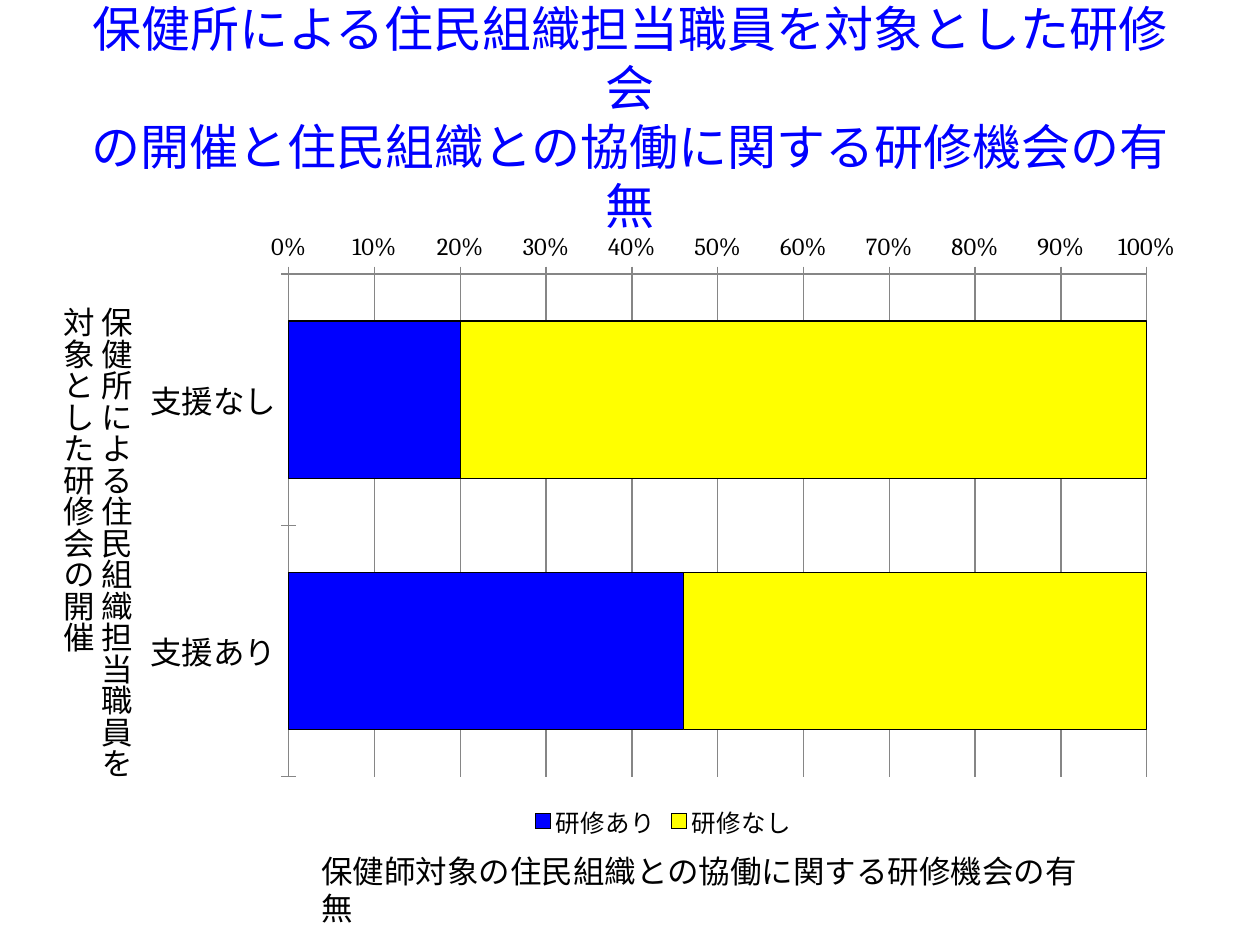
from dataclasses import dataclass

from lxml import etree
from pptx import Presentation
from pptx.chart.data import CategoryChartData
from pptx.dml.color import RGBColor
from pptx.enum.chart import XL_CHART_TYPE, XL_LEGEND_POSITION, XL_TICK_MARK
from pptx.enum.text import MSO_ANCHOR, MSO_AUTO_SIZE, PP_ALIGN
from pptx.oxml import parse_xml
from pptx.oxml.ns import nsdecls, qn
from pptx.util import Inches, Pt

BLUE = RGBColor(0x00, 0x00, 0xFF)
YELLOW = RGBColor(0xFF, 0xFF, 0x00)
BLACK = RGBColor(0x00, 0x00, 0x00)
GRAY = RGBColor(0x86, 0x86, 0x86)
BODY_FONT, AXIS_FONT = "Calibri", "Cambria"
BAR_TYPE = XL_CHART_TYPE.BAR_STACKED_100
LEGEND_BOTTOM = XL_LEGEND_POSITION.BOTTOM
TICK_CROSS, TICK_NONE = XL_TICK_MARK.CROSS, XL_TICK_MARK.NONE
MIDDLE, CENTER = MSO_ANCHOR.MIDDLE, PP_ALIGN.CENTER
NO_AUTOFIT = MSO_AUTO_SIZE.NONE

prs = Presentation()
prs.slide_width, prs.slide_height = Inches(10), Inches(7.5)


@dataclass(frozen=True)
class Box:
    """Position and size as shares of the slide."""
    x: float
    y: float
    w: float
    h: float

    def emu(self) -> tuple[int, int, int, int]:
        width, height = prs.slide_width, prs.slide_height
        return (int(self.x * width), int(self.y * height),
                int(self.w * width), int(self.h * height))


@dataclass(frozen=True)
class Caption:
    box: Box
    lines: tuple[str, ...]
    vertical: bool = False


@dataclass(frozen=True)
class Answer:
    name: str
    values: tuple[int, ...]
    color: RGBColor


TITLE_BOX = Box(0.05, 0.04, 0.9, 1 / 6)
CHART_BOX = Box(0.103, 0.2333, 0.847, 0.66)
PLOT_SHARES = {"x": 0.149, "y": 0.086, "w": 0.804, "h": 0.806}
TITLE_LINES = ("保健所による住民組織担当職員を対象とした研修会",
               "の開催と住民組織との協働に関する研修機会の有無")
CATEGORIES = ("支援なし", "支援あり")
ANSWERS = (Answer("研修あり", (20, 46), BLUE), Answer("研修なし", (80, 54), YELLOW))
CAPTIONS = (
    Caption(Box(0.031, 0.312, 0.081, 0.5133),
            ("保健所による住民組織担当職員を", "対象とした研修会の開催"), vertical=True),
    Caption(Box(0.245, 0.8947, 0.639, 0.0533),
            ("保健師対象の住民組織との協働に関する研修機会の有無",)),
)


def style_font(font, size: float, color: RGBColor, name: str = BODY_FONT) -> None:
    font.name, font.size = name, Pt(size)
    font.color.rgb = color


def add_run(p, text: str, size: float, color: RGBColor) -> None:
    r = p.add_run()
    r.text = text
    style_font(r.font, size, color)
    etree.SubElement(r.font._element, qn("a:ea")).set("typeface", BODY_FONT)


def fill_title(s) -> None:
    sp = s.shapes.title
    sp.left, sp.top, sp.width, sp.height = TITLE_BOX.emu()
    tf = sp.text_frame
    tf.word_wrap, tf.auto_size, tf.vertical_anchor = True, NO_AUTOFIT, MIDDLE
    p = tf.paragraphs[0]
    p.alignment = CENTER
    for i, line in enumerate(TITLE_LINES):
        if i:
            p.add_line_break()
        add_run(p, line, 28, BLUE)


def add_caption(s, caption: Caption) -> None:
    tf = s.shapes.add_textbox(*caption.box.emu()).text_frame
    tf.word_wrap = not caption.vertical
    if caption.vertical:
        tf._txBody.bodyPr.set("vert", "eaVert")
    for i, line in enumerate(caption.lines):
        p = tf.add_paragraph() if i else tf.paragraphs[0]
        add_run(p, line, 18, BLACK)


def set_plot_layout(chart) -> None:
    """Fix the inner plot area as shares of the chart."""
    area = chart.element.find(".//" + qn("c:plotArea"))
    for old in area.findall(qn("c:layout")):
        area.remove(old)
    modes = "".join(f'<c:{k}Mode val="edge"/>' for k in "xy")
    sizes = "".join(f'<c:{k} val="{v}"/>' for k, v in PLOT_SHARES.items())
    area.insert(0, parse_xml(
        f'<c:layout {nsdecls("c")}><c:manualLayout><c:layoutTarget val="inner"/>'
        f'{modes}{sizes}</c:manualLayout></c:layout>'))


def style_axis(axis, size: float, font_name: str) -> None:
    axis.major_tick_mark, axis.minor_tick_mark = TICK_CROSS, TICK_NONE
    axis.format.line.color.rgb = GRAY
    style_font(axis.tick_labels.font, size, BLACK, font_name)


def add_training_chart(s) -> None:
    data = CategoryChartData()
    data.categories = CATEGORIES
    for answer in ANSWERS:
        data.add_series(answer.name, answer.values)
    chart = s.shapes.add_chart(BAR_TYPE, *CHART_BOX.emu(), data).chart
    chart.has_title = False
    style_font(chart.font, 12, BLACK)

    # Bars
    plot = chart.plots[0]
    plot.gap_width, plot.overlap, plot.vary_by_categories = 60, 100, False
    for series, answer in zip(plot.series, ANSWERS):
        series.format.fill.solid()
        series.format.fill.fore_color.rgb = answer.color
        series.format.line.color.rgb = BLACK
        series.format.line.width = Pt(0.75)

    # Axes, with the first category on top
    style_axis(chart.category_axis, 18, BODY_FONT)
    chart.category_axis.reverse_order = True
    axis = chart.value_axis
    style_axis(axis, 14, AXIS_FONT)
    axis.minimum_scale, axis.maximum_scale, axis.major_unit = 0, 1, 0.1
    axis.has_major_gridlines = True
    axis.major_gridlines.format.line.color.rgb = GRAY
    axis.tick_labels.number_format = "0%"
    axis.tick_labels.number_format_is_linked = False

    # Legend and plot area
    chart.has_legend = True
    chart.legend.position = LEGEND_BOTTOM
    chart.legend.include_in_layout = False
    style_font(chart.legend.font, 14, BLACK)
    set_plot_layout(chart)


def main() -> None:
    s = prs.slides.add_slide(prs.slide_layouts[5])
    fill_title(s)
    add_training_chart(s)
    for caption in CAPTIONS:
        add_caption(s, caption)
    prs.save("out.pptx")


if __name__ == "__main__":
    main()
